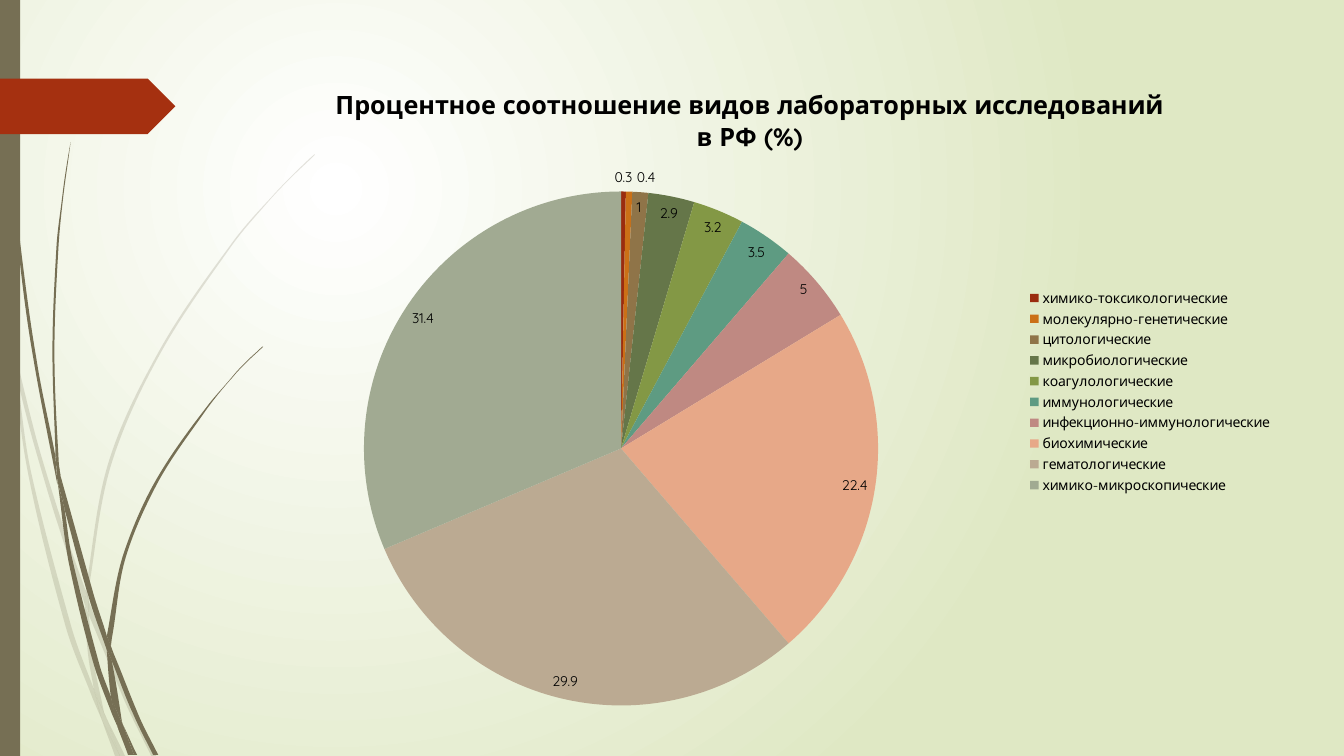
import dataclasses
import lxml.etree
import math
import pptx
import pptx.chart.chart
import pptx.chart.data
import pptx.dml.color
import pptx.enum.chart
import pptx.enum.shapes
import pptx.oxml
import pptx.oxml.ns
import pptx.slide
import pptx.util

# Grid: one cell is a hundredth of an inch
COLS, ROWS = 1333, 750
CELL = pptx.util.Inches(0.01)
CHART = (215, 63, 1057, 651)
PIE = (146, 127, 510, 510)
FONT = "Quicksand"
TITLE = "Процентное соотношение видов лабораторных исследований в РФ (%)"
INK = {"white": "FFFFFF", "lime": "DFE8C4", "olive": "766F54", "red": "A53010", "black": "000000"}

Point = tuple[float, float]


@dataclasses.dataclass
class Blade:
    """A sliver of grass: one edge there, one edge back."""
    out: list[Point]
    back: list[Point]


@dataclasses.dataclass
class Panel:
    kind: pptx.enum.shapes.MSO_SHAPE
    col: int
    row: int
    wide: int
    high: int
    ink: str


@dataclasses.dataclass
class Slice:
    name: str
    share: float
    ink: str


PALE = [
    Blade([(11, 350), (9, 322), (0, 282)], [(0, 299), (10, 344), (11, 350)]),
    Blade([(14, 345), (36, 435), (62, 520), (85, 586)], [(84, 599), (58, 522), (36, 449), (17, 376)]),
    Blade([(88, 596), (92, 607), (127, 692), (155, 750)], [(150, 750), (123, 694), (88, 610)]),
    Blade([(105, 711), (124, 750)], [(119, 750), (105, 711)]),
    Blade([(11, 350), (17, 376), (31, 469), (70, 619), (93, 683)],
          [(101, 714), (92, 693), (65, 621), (28, 470), (11, 350)]),
    Blade([(84, 599), (88, 610), (91, 646), (103, 706), (105, 711)],
          [(96, 692), (93, 683), (87, 646), (84, 599)]),
    Blade([(312, 153), (289, 175), (268, 197), (228, 244), (158, 348), (107, 461), (85, 586)],
          [(88, 596), (88, 584), (110, 462), (160, 349), (229, 245), (268, 198), (290, 175), (312, 154)]),
    Blade([(101, 714), (119, 750)], [(114, 750), (101, 714)]),
    Blade([(85, 586), (88, 596), (88, 610)], [(88, 608), (84, 599)]),
    Blade([(93, 683), (96, 692), (105, 711), (119, 750)], [(101, 714), (99, 707), (93, 683)]),
]

DARK = [
    Blade([(3, 0), (4, 48), (7, 110), (17, 233), (33, 355), (57, 481)],
          [(55, 453), (36, 355), (19, 232), (8, 109), (5, 48), (4, 0)]),
    Blade([(60, 472), (93, 590), (106, 631)], [(106, 645), (88, 592), (64, 505)]),
    Blade([(110, 641), (113, 649), (136, 706), (157, 749)], [(152, 749), (132, 708), (111, 656)]),
    Blade([(57, 477), (64, 505), (72, 556), (98, 657), (110, 691)],
          [(117, 722), (111, 708), (93, 659), (68, 557), (57, 477)]),
    Blade([(70, 141), (63, 193), (58, 245), (54, 349), (58, 453), (60, 472)],
          [(55, 449), (52, 349), (56, 245), (62, 193), (70, 141)]),
    Blade([(122, 719), (136, 749)], [(133, 749), (122, 719)]),
    Blade([(55, 449), (60, 472), (64, 505)], [(57, 477), (55, 453)]),
    Blade([(260, 344), (245, 358), (231, 373), (204, 405), (156, 474), (122, 551), (106, 631)],
          [(110, 641), (111, 633), (125, 552), (158, 476), (205, 406), (231, 374), (245, 359), (261, 344)]),
    Blade([(117, 722), (131, 749)], [(127, 749), (117, 722)]),
    Blade([(106, 645), (111, 656), (121, 716), (122, 719)], [(116, 706), (110, 691), (106, 645)]),
    Blade([(106, 631), (110, 641), (111, 656)], [(109, 651), (106, 645)]),
    Blade([(110, 691), (116, 706), (122, 719), (133, 749)], [(130, 749), (117, 722), (110, 691)]),
]

PANELS = [
    Panel(pptx.enum.shapes.MSO_SHAPE.RECTANGLE, 0, 0, 20, ROWS, "olive"),
    Panel(pptx.enum.shapes.MSO_SHAPE.PENTAGON, 0, 78, 174, 55, "red"),
]

SLICES = [
    Slice("химико-токсикологические", 0.3, "9A2C0F"),
    Slice("молекулярно-генетические", 0.4, "CB7016"),
    Slice("цитологические", 1, "8F7448"),
    Slice("микробиологические", 2.9, "657649"),
    Slice("коагулологические", 3.2, "839845"),
    Slice("иммунологические", 3.5, "5E9B82"),
    Slice("инфекционно-иммунологические", 5, "BF8982"),
    Slice("биохимические", 22.4, "E7A888"),
    Slice("гематологические", 29.9, "BBAA92"),
    Slice("химико-микроскопические", 31.4, "A1AA92"),
]


def tint(code: str) -> pptx.dml.color.RGBColor:
    return pptx.dml.color.RGBColor.from_string(code)


def bend(edge: list[Point]) -> list[tuple[Point, Point]]:
    """Give the two handles of a smooth curve for each stretch of an edge."""
    def reach(base: Point, start: Point, end: Point, size: float) -> Point:
        part = size / (3 * math.dist(start, end))
        return base[0] + (end[0] - start[0]) * part, base[1] + (end[1] - start[1]) * part

    ends = [edge[0], *edge, edge[-1]]
    return [(reach(b, a, c, math.dist(b, c)), reach(c, d, b, math.dist(b, c)))
            for a, b, c, d in zip(ends, ends[1:], ends[2:], ends[3:])]


def paint(shape: pptx.shapes.autoshape.Shape, ink: str, alpha: int = 100) -> None:
    shape.shadow.inherit = False
    shape.fill.solid()
    shape.fill.fore_color.rgb = tint(INK[ink])
    shape.line.fill.background()
    if alpha < 100:
        tone = next(shape._element.iter(pptx.oxml.ns.qn("a:srgbClr")))
        lxml.etree.SubElement(tone, pptx.oxml.ns.qn("a:alpha"), val=str(alpha * 1000))


def draw_grass(slide: pptx.slide.Slide, blades: list[Blade], alpha: int) -> None:
    group = slide.shapes.add_group_shape()
    for blade in blades:
        spots = blade.out + blade.back
        left, top = (min(axis) for axis in zip(*spots))
        pen = group.shapes.build_freeform(*spots[0], scale=CELL)
        pen.add_line_segments(spots[1:], close=True)
        shape = pen.convert_to_shape()
        paint(shape, "olive", alpha)
        # Turn the straight stretches into curves; the tip between edges stays straight
        lines = list(shape._element.iter(pptx.oxml.ns.qn("a:lnTo")))
        for line, grips in zip(lines, [*bend(blade.out), None, *bend(blade.back)]):
            if grips:
                line.tag = pptx.oxml.ns.qn("a:cubicBezTo")
                for index, (x, y) in enumerate(grips):
                    spot = lxml.etree.Element(
                        pptx.oxml.ns.qn("a:pt"), x=str(round(x - left)), y=str(round(y - top)))
                    line.insert(index, spot)


def draw_panel(slide: pptx.slide.Slide, panel: Panel) -> None:
    sides = (side * CELL for side in (panel.col, panel.row, panel.wide, panel.high))
    paint(slide.shapes.add_shape(panel.kind, *sides), panel.ink)


def draw_ground(slide: pptx.slide.Slide) -> None:
    fill = slide.background.fill
    fill.gradient()
    for stop, ink in zip(fill.gradient_stops, ("white", "lime")):
        stop.color.rgb = tint(INK[ink])
    line = next(slide._element.iter(pptx.oxml.ns.qn("a:lin")))
    line.getparent().replace(line, pptx.oxml.parse_xml(
        f'<a:path {pptx.oxml.ns.nsdecls("a")} path="circle">'
        '<a:fillToRect l="50000" t="50000" r="100000" b="100000"/></a:path>'))


def place_plot(chart: pptx.chart.chart.Chart) -> None:
    area = next(chart._chartSpace.iter(pptx.oxml.ns.qn("c:plotArea")))
    for old in area.findall(pptx.oxml.ns.qn("c:layout")):
        area.remove(old)
    sizes = "".join(f'<c:{key} val="{part / whole}"/>' for key, part, whole in zip("xywh", PIE, CHART[2:] * 2))
    area.insert(0, pptx.oxml.parse_xml(
        f'<c:layout {pptx.oxml.ns.nsdecls("c")}><c:manualLayout><c:layoutTarget val="inner"/>'
        f'<c:xMode val="edge"/><c:yMode val="edge"/>{sizes}</c:manualLayout></c:layout>'))


def draw_pie(slide: pptx.slide.Slide) -> None:
    data = pptx.chart.data.CategoryChartData()
    data.categories = [part.name for part in SLICES]
    data.add_series("Series 1", [part.share for part in SLICES])
    sides = (side * CELL for side in CHART)
    chart = slide.shapes.add_chart(pptx.enum.chart.XL_CHART_TYPE.PIE, *sides, data).chart
    chart.font.name, chart.font.size = FONT, pptx.util.Pt(10)
    chart.font.color.rgb = tint(INK["black"])
    # Title and legend
    chart.chart_title.include_in_layout = False
    head = chart.chart_title.text_frame
    head.text = TITLE
    font = head.paragraphs[0].runs[0].font
    font.name, font.size, font.bold = FONT, pptx.util.Pt(18), True
    font.color.rgb = tint(INK["black"])
    chart.has_legend = True
    chart.legend.position = pptx.enum.chart.XL_LEGEND_POSITION.RIGHT
    chart.legend.include_in_layout = False
    # Slices and labels
    plot = chart.plots[0]
    plot.vary_by_categories = True
    for index, part in enumerate(SLICES):
        look = plot.series[0].points[index].format
        look.fill.solid()
        look.fill.fore_color.rgb = tint(part.ink)
        look.line.fill.background()
    plot.has_data_labels = True
    plot.data_labels.show_value = True
    plot.data_labels.show_percentage = False
    plot.data_labels.position = pptx.enum.chart.XL_LABEL_POSITION.BEST_FIT
    place_plot(chart)


def main() -> None:
    deck = pptx.Presentation()
    deck.slide_width, deck.slide_height = COLS * CELL, ROWS * CELL
    slide = deck.slides.add_slide(deck.slide_layouts[6])
    draw_ground(slide)
    draw_grass(slide, PALE, 20)
    draw_grass(slide, DARK, 100)
    for panel in PANELS:
        draw_panel(slide, panel)
    draw_pie(slide)
    deck.save("out.pptx")


if __name__ == "__main__":
    main()
